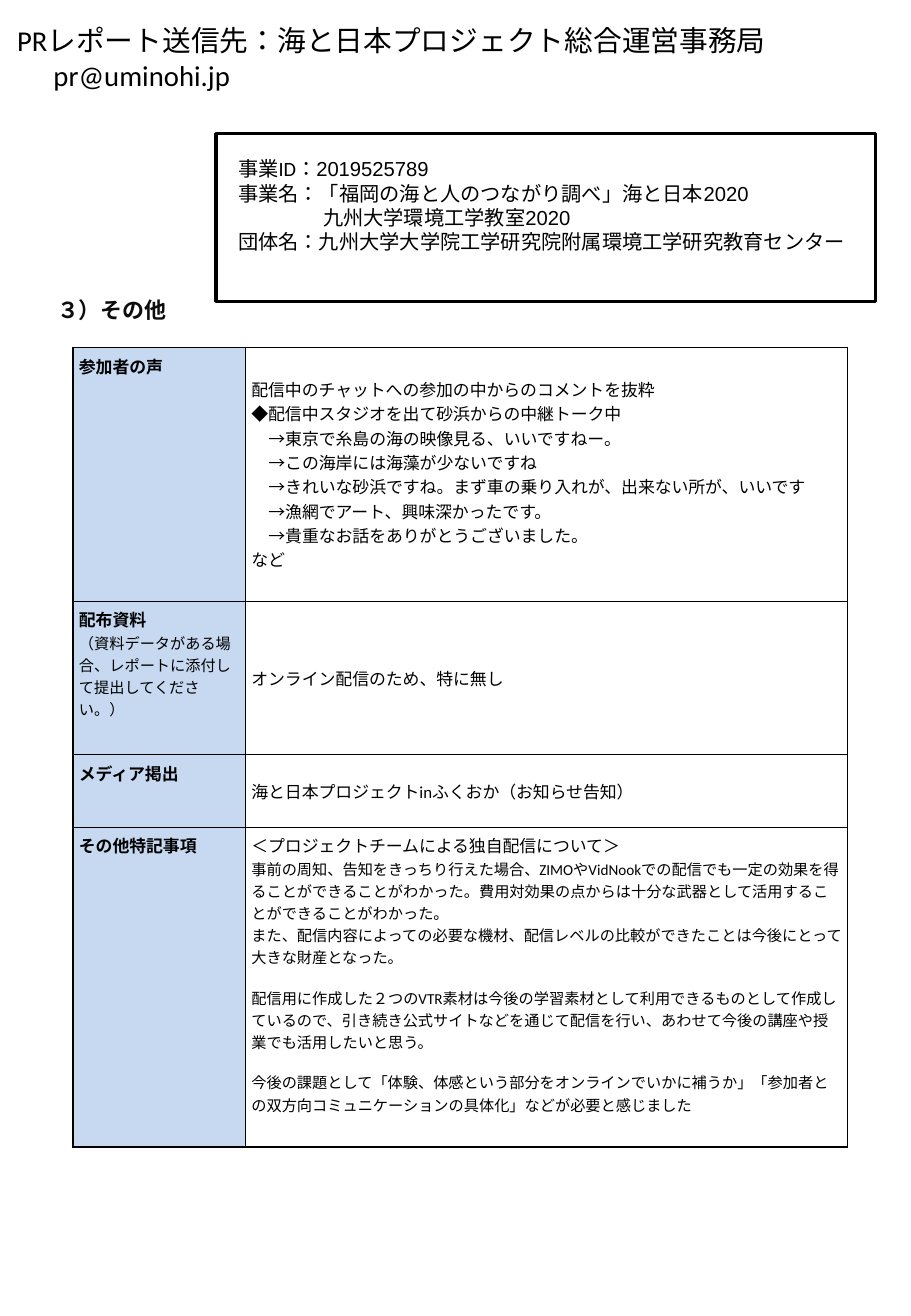
from dataclasses import dataclass

from pptx import Presentation
from pptx.dml.color import RGBColor
from pptx.enum.lang import MSO_LANGUAGE_ID as Lang
from pptx.enum.shapes import MSO_SHAPE as Shape
from pptx.enum.text import MSO_ANCHOR as Anchor
from pptx.oxml import parse_xml
from pptx.oxml.ns import nsdecls
from pptx.util import Inches, Pt

BLACK = RGBColor(0x00, 0x00, 0x00)
INK = RGBColor(0x0D, 0x0D, 0x0D)
BLUE = RGBColor(0xC6, 0xD9, 0xF1)
WHITE = RGBColor(0xFF, 0xFF, 0xFF)
SANS, LATIN = "Arial", "Calibri"
PAD = Inches(0.05)


@dataclass
class Line:
    """One paragraph; text is a string or a list of (text, font) runs."""
    text: object
    size: float = 10
    font: str = LATIN
    bold: bool = False
    indent: float = 0
    before: float = 0
    color: RGBColor = BLACK


def label(text):
    return Line(text, font=SANS, bold=True)


def note(text, before=0):
    return Line(text, size=9, before=before)


VOICES = [
    "東京で糸島の海の映像見る、いいですねー。",
    "この海岸には海藻が少ないですね",
    "きれいな砂浜ですね。まず車の乗り入れが、出来ない所が、いいです",
    "漁網でアート、興味深かったです。",
    "貴重なお話をありがとうございました。",
]

# Height, label lines, body lines, body anchor
ROWS = [
    (2.09, [label("参加者の声")],
     [Line("配信中のチャットへの参加の中からのコメントを抜粋"),
      Line("◆配信中スタジオを出て砂浜からの中継トーク中"),
      *[Line("→" + voice, indent=0.14) for voice in VOICES],
      Line("など")], Anchor.MIDDLE),
    (1.26, [label("配布資料"),
            Line("（資料データがある場合、レポートに添付して提出してください。）",
                 size=9, font=SANS)],
     [Line("オンライン配信のため、特に無し")], Anchor.MIDDLE),
    (0.6, [label("メディア掲出")],
     [Line("海と日本プロジェクトinふくおか（お知らせ告知）")], Anchor.MIDDLE),
    (2.63, [label("その他特記事項")],
     [Line("＜プロジェクトチームによる独自配信について＞"),
      note("事前の周知、告知をきっちり行えた場合、ZIMOやVidNookでの配信でも"
           "一定の効果を得ることができることがわかった。費用対効果の点からは"
           "十分な武器として活用することができることがわかった。"),
      note("また、配信内容によっての必要な機材、配信レベルの比較ができたことは"
           "今後にとって大きな財産となった。"),
      note("配信用に作成した２つのVTR素材は今後の学習素材として利用できるものとして"
           "作成しているので、引き続き公式サイトなどを通じて配信を行い、"
           "あわせて今後の講座や授業でも活用したいと思う。", before=11),
      note("今後の課題として「体験、体感という部分をオンラインでいかに補うか」"
           "「参加者との双方向コミュニケーションの具体化」などが必要と感じました",
           before=11)], Anchor.TOP),
]


def write(frame, lines):
    for i, line in enumerate(lines):
        para = frame.add_paragraph() if i else frame.paragraphs[0]
        if line.indent:
            para._p.get_or_add_pPr().set("marL", str(Inches(line.indent)))
        if line.before:
            para.space_before = Pt(line.before)
        font = para.font
        font.size, font.bold = Pt(line.size), line.bold
        font.color.rgb = line.color
        mixed = isinstance(line.text, list)
        if not mixed:
            font.name = line.font
        for text, face in line.text if mixed else [(line.text, None)]:
            run = para.add_run()
            run.text = text
            run.font.language_id = Lang.JAPANESE
            if face:
                run.font.name = face


def add_text(slide, box, lines):
    frame = slide.shapes.add_textbox(*map(Inches, box)).text_frame
    frame.word_wrap = True
    frame.margin_left = frame.margin_right = PAD
    frame.margin_top = frame.margin_bottom = PAD
    write(frame, lines)


def add_head(slide, box):
    add_text(slide, box, [
        Line([("PR", LATIN),
              ("レポート送信先：海と日本プロジェクト総合運営事務局", SANS)], 17),
        Line("pr@uminohi.jp", 17, indent=0.3)])


def add_info(slide, box):
    """Project details inside a black frame."""
    left, top, width, height = box
    add_text(slide, (left + 0.13, top + 0.14, width - 0.09, height), [
        Line([("事業", SANS), ("ID", LATIN), ("：2019525789", SANS)], 12),
        Line("事業名：「福岡の海と人のつながり調べ」海と日本2020", 12, SANS),
        Line("九州大学環境工学教室2020", 12, SANS, indent=0.7),
        Line("団体名：九州大学大学院工学研究院附属環境工学研究教育センター",
             12, SANS)])
    rect = slide.shapes.add_shape(Shape.RECTANGLE, *map(Inches, box))
    rect.shadow.inherit = False
    rect.fill.background()
    rect.line.color.rgb = BLACK
    rect.line.width = Pt(2)


def fill_cell(cell, lines, color, anchor):
    cell.margin_left = cell.margin_right = PAD
    cell.margin_top = cell.margin_bottom = PAD
    cell.vertical_anchor = anchor
    write(cell.text_frame, lines)
    props = cell._tc.get_or_add_tcPr()
    for side in "LRTB":
        props.append(parse_xml(
            f'<a:ln{side} {nsdecls("a")} w="{Pt(1)}"><a:solidFill>'
            f'<a:srgbClr val="{BLACK}"/></a:solidFill></a:ln{side}>'))
    cell.fill.solid()
    cell.fill.fore_color.rgb = color


def add_report(slide, box):
    grid = slide.shapes.add_table(len(ROWS), 2, *map(Inches, box)).table
    grid.first_row = grid.horz_banding = False
    grid.columns[0].width = Inches(1.42)
    grid.columns[1].width = Inches(box[2] - 1.42)
    for i, (height, head, body, anchor) in enumerate(ROWS):
        grid.rows[i].height = Inches(height)
        fill_cell(grid.cell(i, 0), head, BLUE, Anchor.TOP)
        fill_cell(grid.cell(i, 1), body, WHITE, anchor)


def main():
    deck = Presentation()
    deck.slide_width, deck.slide_height = Inches(7.5), Inches(10.83)
    slide = deck.slides.add_slide(deck.slide_layouts[6])
    add_head(slide, (0.09, 0.14, 6.31, 0.67))
    add_report(slide, (0.6, 2.86, 6.38, 6.58))
    add_text(slide, (0.42, 2.39, 3.28, 0.29),
             [Line("３）その他", 13, SANS, bold=True, color=INK)])
    add_info(slide, (1.78, 1.1, 5.43, 1.38))
    deck.save("out.pptx")


if __name__ == "__main__":
    main()
